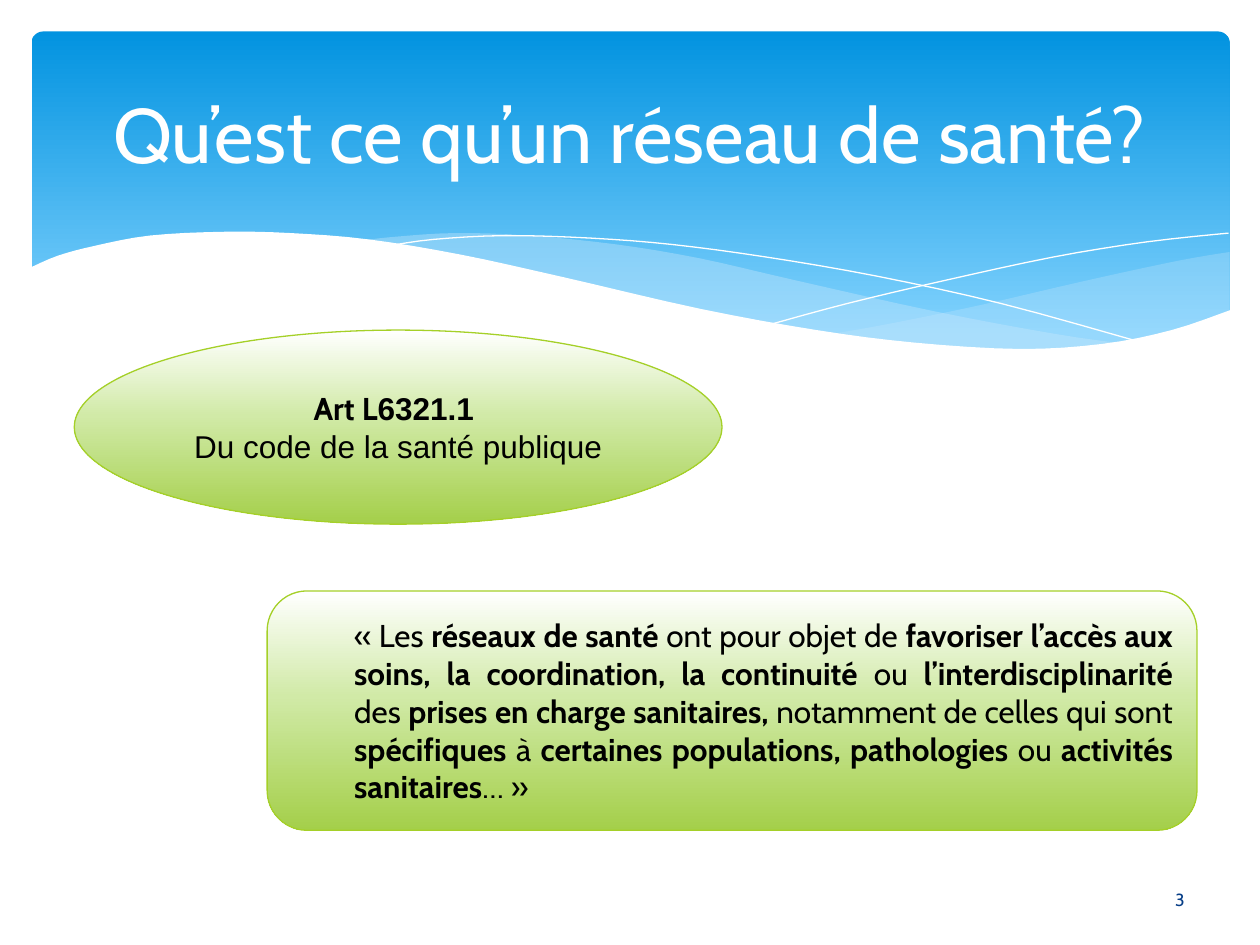
import copy
import lxml.etree
import pptx
import pptx.dml.color
import pptx.enum.shapes
import pptx.enum.text
import pptx.oxml.ns
import pptx.util

Inches, Pt = pptx.util.Inches, pptx.util.Pt
MSO_SHAPE = pptx.enum.shapes.MSO_SHAPE
PP_ALIGN = pptx.enum.text.PP_ALIGN
MIDDLE = pptx.enum.text.MSO_ANCHOR.MIDDLE
qn = pptx.oxml.ns.qn


def rgb(color):
    return pptx.dml.color.RGBColor.from_string(color)


def paint_gradient(shape, stops):
    shape.shadow.inherit = False
    shape.fill.gradient()
    shape.fill.gradient_angle = 270
    stop_list = shape._element.spPr.find(".//" + qn("a:gsLst"))
    for _ in stops[2:]:
        stop_list.append(copy.deepcopy(stop_list[0]))
    for stop, (position, color) in zip(shape.fill.gradient_stops, stops):
        stop.position = position
        stop.color.rgb = rgb(color)


presentation = pptx.Presentation()
presentation.slide_width, presentation.slide_height = Inches(10), Inches(7.5)
slide = presentation.slides.add_slide(presentation.slide_layouts[5])
shapes = slide.shapes

banner = shapes.add_shape(MSO_SHAPE.ROUNDED_RECTANGLE, Inches(0.25), Inches(0.25), Inches(9.51), Inches(2.7))
banner.adjustments[0] = 0.034
paint_gradient(banner, [(0, "0293E0"), (0.9, "83D3FE")])
banner.line.fill.background()

# Each wave: fill colour (None for a white line), opacity in percent, smooth edges
waves = [
    ("C6E7FC", 29, [
        [(9.76, 2), (9.35, 2.07), (8.61, 2.23), (7.79, 2.42), (7.06, 2.57), (6.61, 2.65)],
        [(6.61, 2.65), (7.19, 2.72), (7.69, 2.77), (8.14, 2.78), (8.63, 2.75), (9.05, 2.69), (9.42, 2.59), (9.76, 2.47)],
    ]),
    ("C6E7FC", 40, [
        [(8.93, 2.73), (8.37, 2.65), (7.41, 2.47), (6.29, 2.22), (5.55, 2.05), (4.89, 1.94),
         (4.2, 1.87), (3.61, 1.85), (3.13, 1.88), (2.86, 1.91)],
        [(2.86, 1.91), (3.42, 1.99), (4.04, 2.11), (4.49, 2.22), (5.3, 2.4), (6.01, 2.55), (6.65, 2.66),
         (7.22, 2.74), (7.73, 2.77), (8.18, 2.78), (8.57, 2.77), (8.93, 2.73)],
    ]),
    (None, 100, [
        [(3.09, 1.95), (3.44, 1.9), (4.01, 1.87), (4.69, 1.89), (5.33, 1.94), (6.08, 2.04),
         (6.95, 2.19), (7.95, 2.41), (9.07, 2.72)],
    ]),
    (None, 100, [
        [(6.13, 2.57), (6.72, 2.41), (7.48, 2.23), (8.36, 2.04), (9.1, 1.92), (9.75, 1.85)],
    ]),
    ("FFFFFF", 100, [
        [(9.77, 2.46), (9.3, 2.62), (8.75, 2.73), (8.09, 2.77), (7.26, 2.72), (6.48, 2.62), (5.55, 2.45),
         (4.47, 2.2), (3.65, 2.02), (2.92, 1.9), (2.3, 1.85), (1.77, 1.84), (1.19, 1.87), (0.76, 1.95),
         (0.46, 2.03), (0.23, 2.13)],
        [(0.23, 3.29), (9.77, 3.29)],
    ]),
]
for color, opacity, edges in waves:
    outline = []
    for edge in edges:
        guides = [edge[0], *edge, edge[-1]]
        for before, start, end, after in zip(guides, guides[1:], guides[2:], guides[3:]):
            for t in (0, 0.25, 0.5, 0.75):
                outline.append(tuple(
                    Inches(b + ((c - a) * t + (2 * a - 5 * b + 4 * c - d) * t**2 + (3 * b - a - 3 * c + d) * t**3) / 2)
                    for a, b, c, d in zip(before, start, end, after)
                ))
        outline.append(tuple(Inches(value) for value in edge[-1]))
    builder = shapes.build_freeform(*outline[0])
    builder.add_line_segments(outline[1:], close=color is not None)
    wave = builder.convert_to_shape()
    wave.shadow.inherit = False
    if color:
        wave.fill.solid()
        wave.fill.fore_color.rgb = rgb(color)
        wave.line.fill.background()
        color_node = wave._element.spPr.find(qn("a:solidFill"))[0]
        lxml.etree.SubElement(color_node, qn("a:alpha"), val=str(opacity * 1000))
    else:
        wave.fill.background()
        wave.line.color.rgb = rgb("FFFFFF")
        wave.line.width = Pt(0)

title = shapes.title
shapes._spTree.append(title._element)
title.left, title.top, title.width, title.height = Inches(0.5), Inches(0.37), Inches(9), Inches(1.37)
title.text_frame.text = "Qu’est ce qu’un réseau de santé?"
title.text_frame.vertical_anchor = MIDDLE
heading = title.text_frame.paragraphs[0]
heading.alignment = PP_ALIGN.CENTER
heading.font.size, heading.font.name = Pt(44), "Cabin"
heading.font.color.rgb = rgb("FFFFFF")

definition = [
    ("«\u00a0Les ", False), ("réseaux de santé ", True), ("ont pour objet de ", False),
    ("favoriser l’accès aux soins, la coordination, la continuité ", True), ("ou ", False),
    ("l’interdisciplinarité ", True), ("des ", False), ("prises en charge sanitaires, ", True),
    ("notamment de celles qui sont", False), (" spécifiques ", True), ("à", False),
    (" certaines populations, pathologies ", True), ("ou ", False), ("activités sanitaires", True),
    ("…\u00a0»", False),
]
cards = [
    (MSO_SHAPE.ROUNDED_RECTANGLE, (2.12, 4.69, 7.38, 1.9), PP_ALIGN.JUSTIFY, 0.5,
     [[(text, bold, "Cabin") for text, bold in definition]]),
    (MSO_SHAPE.OVAL, (0.59, 2.62, 5.14, 1.54), PP_ALIGN.CENTER, 0,
     [[("Art L", True, "Cabin"), ("6321.1 ", True, "Arial")],
      [("Du code de la santé publique", False, "Arial")]]),
]
for preset, box, alignment, indent, paragraphs in cards:
    card = shapes.add_shape(preset, *map(Inches, box))
    paint_gradient(card, [(0, "FFFFFF"), (0.44, "D1EAA7"), (1, "A4CF4A")])
    card.line.color.rgb = rgb("A5D028")
    card.line.width = Pt(0.75)
    frame = card.text_frame
    frame.word_wrap = True
    frame.vertical_anchor = MIDDLE
    for index, pieces in enumerate(paragraphs):
        paragraph = frame.add_paragraph() if index else frame.paragraphs[0]
        paragraph.alignment = alignment
        paragraph._p.get_or_add_pPr().set("marL", str(Inches(indent)))
        paragraph.font.size = Pt(18)
        paragraph.font.color.rgb = rgb("000000")
        for text, bold, font_name in pieces:
            run = paragraph.add_run()
            run.text = text
            run.font.size = Pt(18)
            run.font.color.rgb = rgb("000000")
            run.font.bold, run.font.name = bold, font_name

page_number = shapes.add_textbox(Inches(8.73), Inches(6.94), Inches(1.27), Inches(0.4)).text_frame
page_number.word_wrap = True
page_number.vertical_anchor = MIDDLE
page_number.text = "3"
number = page_number.paragraphs[0]
number.alignment = PP_ALIGN.CENTER
number.font.size, number.font.name = Pt(10), "Cabin"
number.font.color.rgb = rgb("073E87")

presentation.save("out.pptx")
